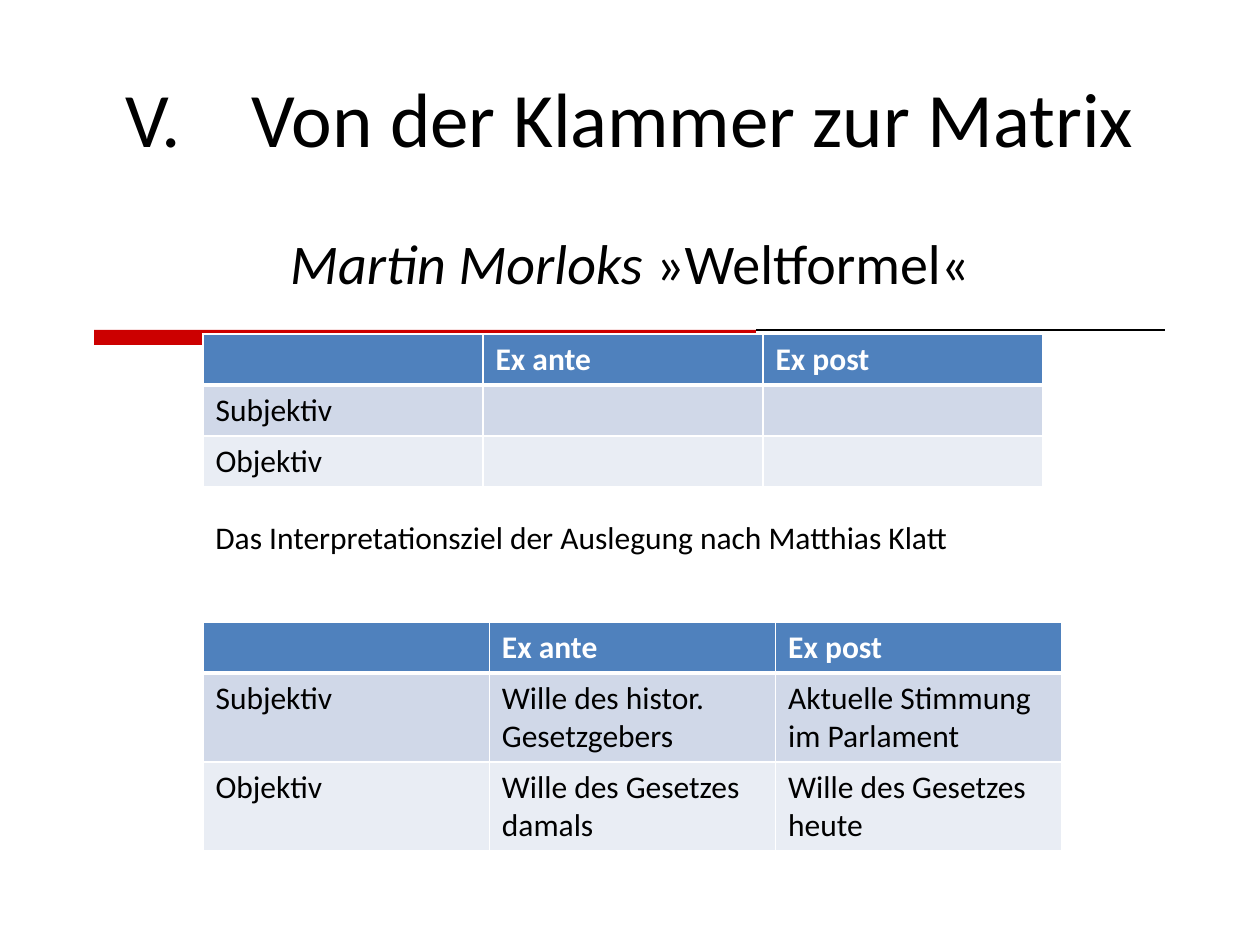
from dataclasses import dataclass

from lxml.etree import SubElement
from pptx import Presentation
from pptx.dml.color import RGBColor
from pptx.enum.shapes import MSO_CONNECTOR as Connector, MSO_SHAPE as Shape
from pptx.enum.text import MSO_ANCHOR as Anchor, PP_ALIGN as Align
from pptx.oxml.ns import qn
from pptx.util import Emu, Pt

EMU_PER_PX = 914400 / 126


@dataclass(frozen=True)
class Theme:
    font: str = "Calibri"
    title_size: int = 44
    subtitle_size: int = 32
    body_size: int = 18
    text: str = "000000"
    white: str = "FFFFFF"
    accent: str = "CC0000"
    header: str = "4F81BD"
    bands: tuple = ("D0D8E8", "E9EDF4")


THEME = Theme()


def px(length):
    return Emu(round(length * EMU_PER_PX))


def style(paragraph, size, color=THEME.text, bold=False):
    font = paragraph.font
    font.name = THEME.font
    font.size = Pt(size)
    font.bold = bold
    font.color.rgb = RGBColor.from_string(color)


def add_text(slide, box, runs, size, align=Align.LEFT, anchor=Anchor.TOP):
    frame = slide.shapes.add_textbox(*map(px, box)).text_frame
    frame.word_wrap = True
    frame.vertical_anchor = anchor
    paragraph = frame.paragraphs[0]
    paragraph.alignment = align
    style(paragraph, size)
    for text, italic in runs:
        run = paragraph.add_run()
        run.text = text
        if italic:
            run.font.italic = True
    return paragraph


def add_tab_stop(paragraph, position):
    properties = paragraph._p.get_or_add_pPr()
    tabs = SubElement(properties, qn("a:tabLst"))
    SubElement(tabs, qn("a:tab"), pos=str(px(position)), algn="l")
    properties.append(properties.find(qn("a:defRPr")))


def add_rule(slide, left, top, bar_width, bar_height, width):
    bar = slide.shapes.add_shape(
        Shape.RECTANGLE, *map(px, (left, top, bar_width, bar_height)))
    bar.shadow.inherit = False
    bar.fill.solid()
    bar.fill.fore_color.rgb = RGBColor.from_string(THEME.accent)
    bar.line.fill.background()
    line = slide.shapes.add_connector(
        Connector.STRAIGHT, *map(px, (left + bar_width, top, left + width, top)))
    line.line.width = Pt(0.75)
    line.line.color.rgb = RGBColor.from_string(THEME.text)
    SubElement(line._element.spPr, qn("a:effectLst"))


def set_borders(cell, top, bottom):
    properties = cell._tc.get_or_add_tcPr()
    widths = {"lnL": 1, "lnR": 1, "lnT": top, "lnB": bottom}
    for index, (side, width) in enumerate(widths.items()):
        border = properties.makeelement(qn(f"a:{side}"), w=str(Pt(width)))
        fill = SubElement(border, qn("a:solidFill"))
        SubElement(fill, qn("a:srgbClr"), val=THEME.white)
        properties.insert(index, border)


def fill_cell(cell, text, row):
    is_header = row == 0
    background = THEME.header if is_header else THEME.bands[(row - 1) % 2]
    cell.fill.solid()
    cell.fill.fore_color.rgb = RGBColor.from_string(background)
    cell.text = text
    for paragraph in cell.text_frame.paragraphs:
        style(paragraph, THEME.body_size,
              THEME.white if is_header else THEME.text, is_header)
    set_borders(cell, 3 if row == 1 else 1, 3 if is_header else 1)


def add_matrix(slide, left, top, width, row_heights, rows):
    table = slide.shapes.add_table(
        len(rows), len(rows[0]),
        *map(px, (left, top, width, sum(row_heights)))).table
    for column in table.columns:
        column.width = px(width / len(rows[0]))
    for index, (height, texts) in enumerate(zip(row_heights, rows)):
        table.rows[index].height = px(height)
        for cell, text in zip(table.rows[index].cells, texts):
            fill_cell(cell, text, index)


def main():
    presentation = Presentation()
    presentation.slide_width, presentation.slide_height = px(1260), px(945)
    slide = presentation.slides.add_slide(presentation.slide_layouts[6])

    add_rule(slide, 94, 330, 662, 15, 1071)
    title = add_text(slide, (63, 38, 1134, 158),
                     [("V.\tVon der Klammer zur Matrix", False)],
                     THEME.title_size, Align.CENTER, Anchor.MIDDLE)
    add_tab_stop(title, 126)
    add_text(slide, (63, 222, 1134, 90),
             [("Martin Morloks ", True), ("»Weltformel«", False)],
             THEME.subtitle_size, Align.CENTER)

    header = ("", "Ex ante", "Ex post")
    add_matrix(slide, 203, 334, 840, (51, 51, 51), [
        header,
        ("Subjektiv", "", ""),
        ("Objektiv", "", ""),
    ])
    add_matrix(slide, 203, 622, 859, (51, 89, 89), [
        header,
        ("Subjektiv", "Wille des histor.\nGesetzgebers",
         "Aktuelle Stimmung im Parlament"),
        ("Objektiv", "Wille des Gesetzes\ndamals",
         "Wille des Gesetzes\nheute"),
    ])
    add_text(slide, (203, 512, 833, 50),
             [("Das Interpretationsziel der Auslegung nach Matthias Klatt", False)],
             THEME.body_size)

    presentation.save("out.pptx")


if __name__ == "__main__":
    main()
